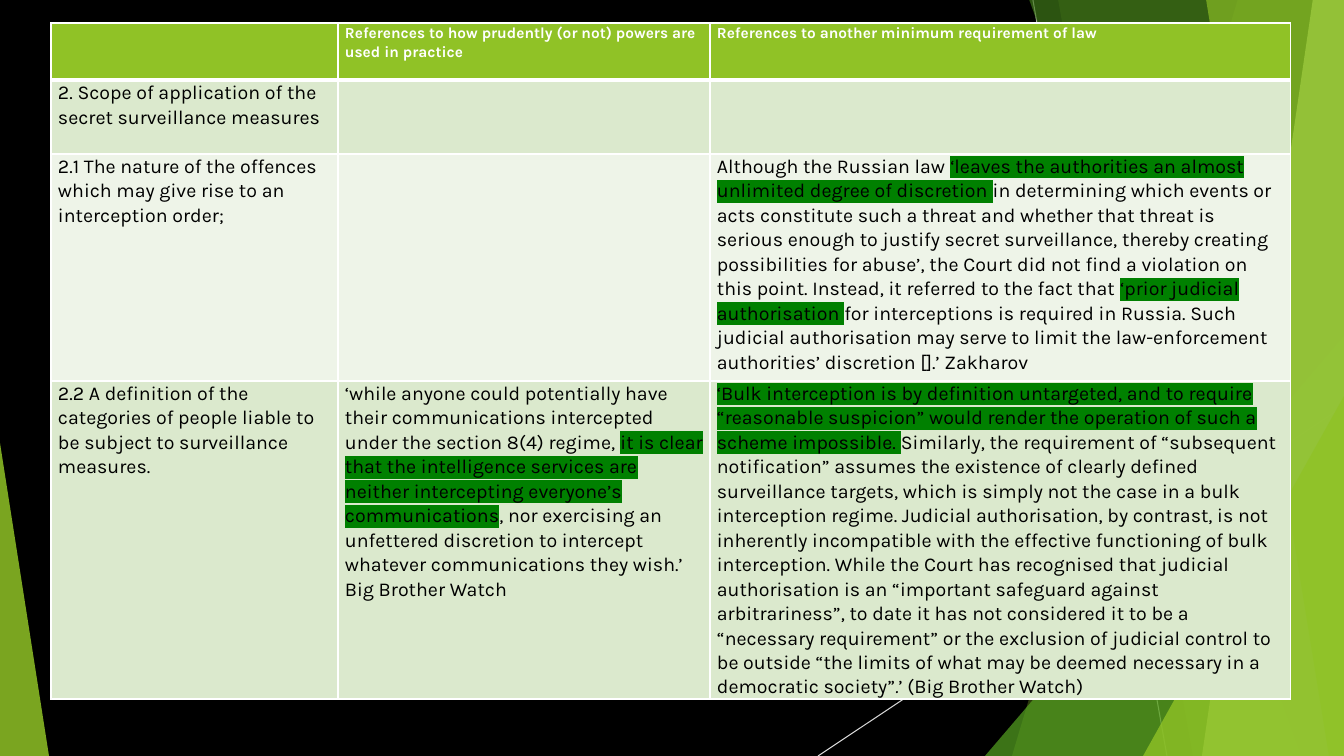
from dataclasses import dataclass

from lxml.etree import SubElement
from pptx import Presentation
from pptx.dml.color import RGBColor
from pptx.enum.shapes import MSO_CONNECTOR, MSO_SHAPE
from pptx.oxml.ns import qn
from pptx.util import Emu, Pt

WIDTH, HEIGHT = 1344, 756
SCALE = 12192000 / WIDTH


@dataclass(frozen=True)
class Theme:
    """Colours, font and type sizes of the deck."""
    background: str = "000000"
    text: str = "000000"
    white: str = "FFFFFF"
    mark: str = "008000"
    green: str = "90C226"
    leaf: str = "54A021"
    forest: str = "3F7819"
    lime: str = "C0E474"
    row_dark: str = "DBE9CD"
    row_light: str = "EEF4E8"
    line_dark: str = "BFBFBF"
    line_light: str = "D9D9D9"
    font: str = "Karla"
    header_size: int = 11
    body_size: int = 14
    line_spacing: float = 1.07


THEME = Theme()
MARK = {"mark": True}
ITALIC = {"italic": True}

COLUMN_WIDTHS = [287, 372, 581]
ROW_HEIGHTS = [57, 74, 227, 318]
ROW_FILLS = [THEME.green, THEME.row_dark, THEME.row_light, THEME.row_dark]
ROWS = [
    [
        [],
        [("References to how prudently (or not) powers are used in practice", {})],
        [("References to another minimum requirement of law", {})],
    ],
    [
        [("2. Scope of application of the secret surveillance measures", {})],
        [],
        [],
    ],
    [
        [("2.1 The nature of the offences which may give rise to an interception order;", {})],
        [],
        [
            ("Although the Russian law ", {}),
            ("‘leaves the authorities an almost unlimited degree of discretion ", MARK),
            ("in determining which events or acts constitute such a threat and whether "
             "that threat is serious enough to justify secret surveillance, thereby "
             "creating possibilities for abuse’, the Court did not find a violation on "
             "this point. Instead, it referred to the fact that ", {}),
            ("‘prior judicial authorisation ", MARK),
            ("for interceptions is required in Russia. Such judicial authorisation may "
             "serve to limit the law-enforcement authorities’ discretion [].’ Zakharov", {}),
        ],
    ],
    [
        [("2.2 A definition of the categories of people liable to be subject to "
          "surveillance measures.", {})],
        [
            ("‘while anyone could potentially have their communications intercepted "
             "under the section 8(4) regime, ", {}),
            ("it is clear that the intelligence services are neither intercepting "
             "everyone’s communications", MARK),
            (", nor exercising an unfettered discretion to intercept whatever "
             "communications they wish.’ Big Brother Watch", {}),
        ],
        [
            ("‘Bulk interception is by definition untargeted, and to require “reasonable "
             "suspicion” would render the operation of such a scheme impossible. ", MARK),
            ("Similarly, the requirement of “subsequent notification” assumes the "
             "existence of clearly defined surveillance targets, which is simply not the "
             "case in a bulk interception regime. Judicial authorisation, by contrast, is "
             "not inherently incompatible with the effective functioning of bulk "
             "interception. While the Court has recognised that judicial authorisation is "
             "an “important safeguard against arbitrariness”, to date it has not "
             "considered it to be a “necessary requirement” or the exclusion of judicial "
             "control to be outside “the limits of what may be deemed necessary in a "
             "democratic society”", {}),
            (".", ITALIC),
            ("’ (Big Brother Watch)", {}),
        ],
    ],
]


def px(length):
    """Turn pixels into EMU."""
    return Emu(round(length * SCALE))


def add_span(para, text, *, size, color, bold=False, italic=False, mark=False):
    """Add one formatted run to a paragraph."""
    span = para.add_run()
    span.text = text
    font = span.font
    font.size, font.bold, font.italic = Pt(size), bold, italic
    font.color.rgb = RGBColor.from_string(color)
    font.name = THEME.font
    if mark:
        properties = span.font.fill and para.runs[-1].font.color and span.element_properties \
            if hasattr(span, "element_properties") else para.runs[-1]._r.get_or_add_rPr()
        highlight = SubElement(properties, qn("a:highlight"))
        SubElement(highlight, qn("a:srgbClr"), val=THEME.mark)
        properties.find(qn("a:solidFill")).addnext(highlight)


def paint(shape, color, opacity):
    """Give a shape a translucent fill without line or shadow."""
    shape.shadow.inherit = False
    shape.fill.solid()
    shape.fill.fore_color.rgb = RGBColor.from_string(color)
    shape.line.fill.background()
    tint = shape.element.spPr.find(".//" + qn("a:srgbClr"))
    SubElement(tint, qn("a:alpha"), val=str(opacity * 1000))


def add_ray(page, start, end, color):
    """Draw a thin straight line between two points."""
    ray = page.shapes.add_connector(MSO_CONNECTOR.STRAIGHT, *map(px, start + end))
    ray.line.color.rgb = RGBColor.from_string(color)
    ray.line.width = Pt(0.75)
    SubElement(ray.element.spPr, qn("a:effectLst"))


def add_band(page, top_left, bottom_left, box, color, opacity):
    """Fill the box from a slanted left edge to its right side."""
    left, top, width, height = box
    right, bottom = left + width, top + height
    builder = page.shapes.build_freeform(left + top_left, top - 1, scale=SCALE)
    builder.add_line_segments(
        [(right, top - 1), (right, bottom), (left + bottom_left, bottom)], close=True)
    paint(builder.convert_to_shape(), color, opacity)


def add_wedge(page, box, apex, color, opacity):
    """Draw a right-angled triangle whose apex is at the left (0) or right (1)."""
    wedge = page.shapes.add_shape(MSO_SHAPE.ISOSCELES_TRIANGLE, *map(px, box))
    wedge.adjustments[0] = apex
    paint(wedge, color, opacity)


def add_facets(page, box):
    """Draw the green facets along the sides of the box."""
    left, top, width, height = box
    right, bottom = left + width, top + height
    add_ray(page, (left + 1033, top), (left + 1167, bottom), THEME.line_dark)
    add_ray(page, (right, top + 406), (left + 818, bottom), THEME.line_light)
    add_band(page, 1238, 1012, box, THEME.green, 30)
    add_band(page, 1058, 1193, box, THEME.green, 20)
    add_wedge(page, (right - 359, bottom - 420, 359, 420), 1, THEME.leaf, 72)
    add_band(page, 1029, 1301, box, THEME.forest, 70)
    add_band(page, 1313, 1202, box, THEME.lime, 70)
    add_band(page, 1206, 1329, box, THEME.green, 65)
    add_wedge(page, (right - 201, bottom - 360, 201, 360), 1, THEME.green, 80)
    add_wedge(page, (left, bottom - 313, 49, 313), 0, THEME.green, 85)


def add_borders(cell, top, bottom):
    """Rule a cell in white with the given top and bottom widths in points."""
    properties = cell._tc.get_or_add_tcPr()
    for side, width in {"L": 1, "R": 1, "T": top, "B": bottom}.items():
        line = SubElement(properties, qn(f"a:ln{side}"), w=str(Pt(width)))
        SubElement(SubElement(line, qn("a:solidFill")), qn("a:srgbClr"), val=THEME.white)


def fill_cell(cell, spans, row):
    """Set the margins, borders, fill and text of a cell."""
    cell.margin_left = cell.margin_right = px(7)
    cell.margin_top = cell.margin_bottom = 0
    add_borders(cell, 3 if row == 1 else 1, 3 if row == 0 else 1)
    cell.fill.solid()
    cell.fill.fore_color.rgb = RGBColor.from_string(ROW_FILLS[row])
    para = cell.text_frame.paragraphs[0]
    para.line_spacing = THEME.line_spacing
    header = row == 0
    for text, style in spans:
        add_span(para, text, bold=header,
                 size=THEME.header_size if header else THEME.body_size,
                 color=THEME.white if header else THEME.text, **style)


def add_requirements(page, box):
    """Place the table of requirements in the box."""
    table = page.shapes.add_table(len(ROWS), len(COLUMN_WIDTHS), *map(px, box)).table
    table.first_row = table.horz_banding = False
    for column, width in zip(table.columns, COLUMN_WIDTHS):
        column.width = px(width)
    for index, (row, height) in enumerate(zip(table.rows, ROW_HEIGHTS)):
        row.height = px(height)
        for cell, spans in zip(row.cells, ROWS[index]):
            fill_cell(cell, spans, index)


def main():
    """Build the deck and save it."""
    deck = Presentation()
    deck.slide_width, deck.slide_height = px(WIDTH), px(HEIGHT)
    page = deck.slides.add_slide(deck.slide_layouts[6])
    page.background.fill.solid()
    page.background.fill.fore_color.rgb = RGBColor.from_string(THEME.background)
    add_facets(page, (0, 0, WIDTH, HEIGHT))
    add_requirements(page, (51, 23, sum(COLUMN_WIDTHS), sum(ROW_HEIGHTS)))
    deck.save("out.pptx")


if __name__ == "__main__":
    main()
